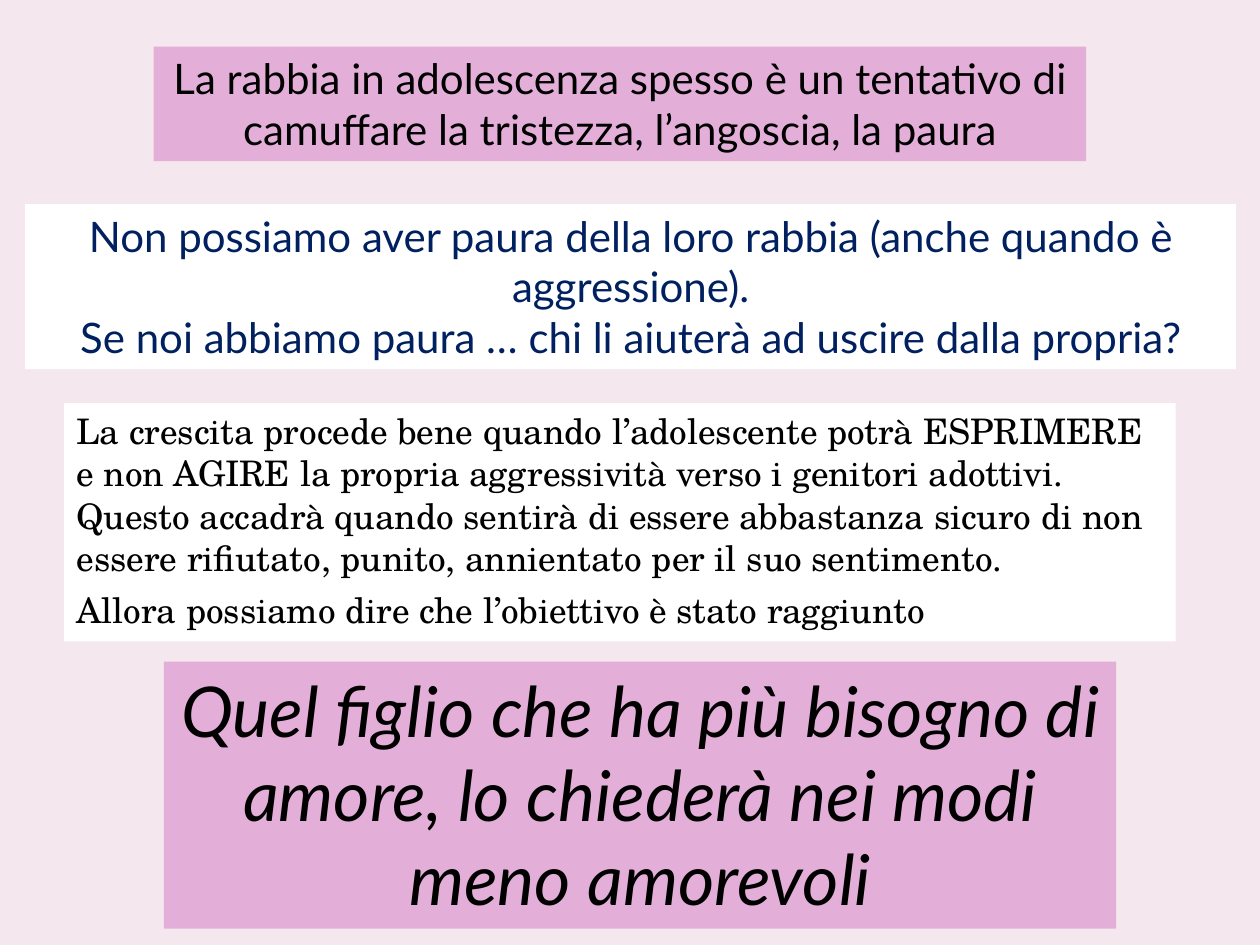
from dataclasses import dataclass

from pptx import Presentation
from pptx import util as u
from pptx.dml import color
from pptx.enum import shapes, text


@dataclass(frozen=True)
class Theme:
    background: str = "F4E7ED"
    accent: str = "E3AFD8"
    panel: str = "FFFFFF"
    ink: str = "000000"
    navy: str = "002060"
    sans: str = "Lato"
    serif: str = "TeX Gyre Schola"
    body_size: float = 20.1
    statement_size: float = 24
    quote_size: float = 40


THEME = Theme()


def rgb(value):
    return color.RGBColor.from_string(value)


def write_text(frame, paragraphs, *, size, font=THEME.sans, ink=THEME.ink,
               italic=False, align=text.PP_ALIGN.CENTER, gap=0):
    for index, content in enumerate(paragraphs):
        paragraph = frame.add_paragraph() if index else frame.paragraphs[0]
        paragraph.alignment = align
        paragraph.space_before = u.Pt(gap if index else 0)
        run = paragraph.add_run()
        run.text = content
        run.font.name = font
        run.font.size = u.Pt(size)
        run.font.italic = italic
        run.font.color.rgb = rgb(ink)


def add_panel(slide, box, fill, paragraphs, **text_format):
    shape = slide.shapes.add_shape(
        shapes.MSO_SHAPE.RECTANGLE, *(u.Inches(length) for length in box))
    shape.shadow.inherit = False
    shape.fill.solid()
    shape.fill.fore_color.rgb = rgb(fill)
    shape.line.fill.background()
    frame = shape.text_frame
    frame.word_wrap = True
    frame.vertical_anchor = text.MSO_ANCHOR.TOP
    write_text(frame, paragraphs, **text_format)


def add_heading(slide, box):
    add_panel(slide, box, THEME.accent, [
        "La rabbia in adolescenza spesso è un tentativo di camuffare "
        "la tristezza, l’angoscia, la paura",
    ], size=THEME.statement_size)


def add_question(slide, box):
    add_panel(slide, box, THEME.panel, [
        "Non possiamo aver paura della loro rabbia (anche quando è aggressione).",
        "Se noi abbiamo paura … chi li aiuterà ad uscire dalla propria?",
    ], size=THEME.statement_size, ink=THEME.navy)


def add_explanation(slide, box):
    add_panel(slide, box, THEME.panel, [
        "La crescita procede bene quando l’adolescente potrà ESPRIMERE "
        "e non AGIRE la propria aggressività verso i genitori adottivi. "
        "Questo accadrà quando sentirà di essere abbastanza sicuro di non "
        "essere rifiutato, punito, annientato per il suo sentimento.",
        "Allora possiamo dire che l’obiettivo è stato raggiunto",
    ], size=THEME.body_size, font=THEME.serif, align=text.PP_ALIGN.LEFT, gap=6)


def add_quote(slide, box):
    add_panel(slide, box, THEME.accent, [
        "Quel figlio che ha più bisogno di amore, lo chiederà nei modi "
        "meno amorevoli",
    ], size=THEME.quote_size, italic=True)


def main():
    presentation = Presentation()
    presentation.slide_width = u.Inches(10)
    presentation.slide_height = u.Inches(7.5)
    slide = presentation.slides.add_slide(presentation.slide_layouts[6])
    slide.background.fill.solid()
    slide.background.fill.fore_color.rgb = rgb(THEME.background)

    add_heading(slide, (1.22, 0.37, 7.4, 0.91))
    add_quote(slide, (1.3, 5.25, 7.56, 2.12))
    add_explanation(slide, (0.51, 3.2, 8.82, 1.89))
    add_question(slide, (0.2, 1.62, 9.61, 1.31))

    presentation.save("out.pptx")


if __name__ == "__main__":
    main()
